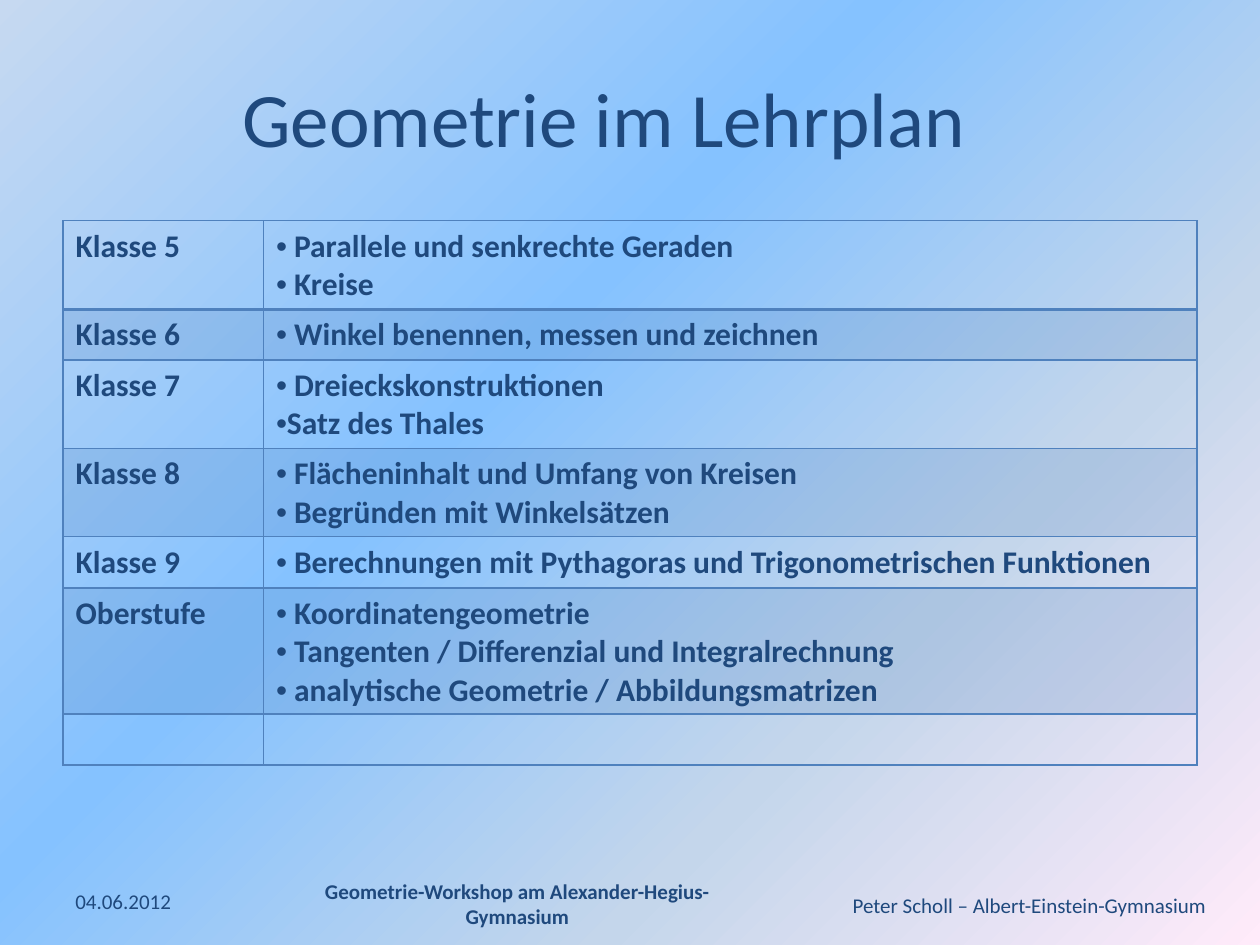
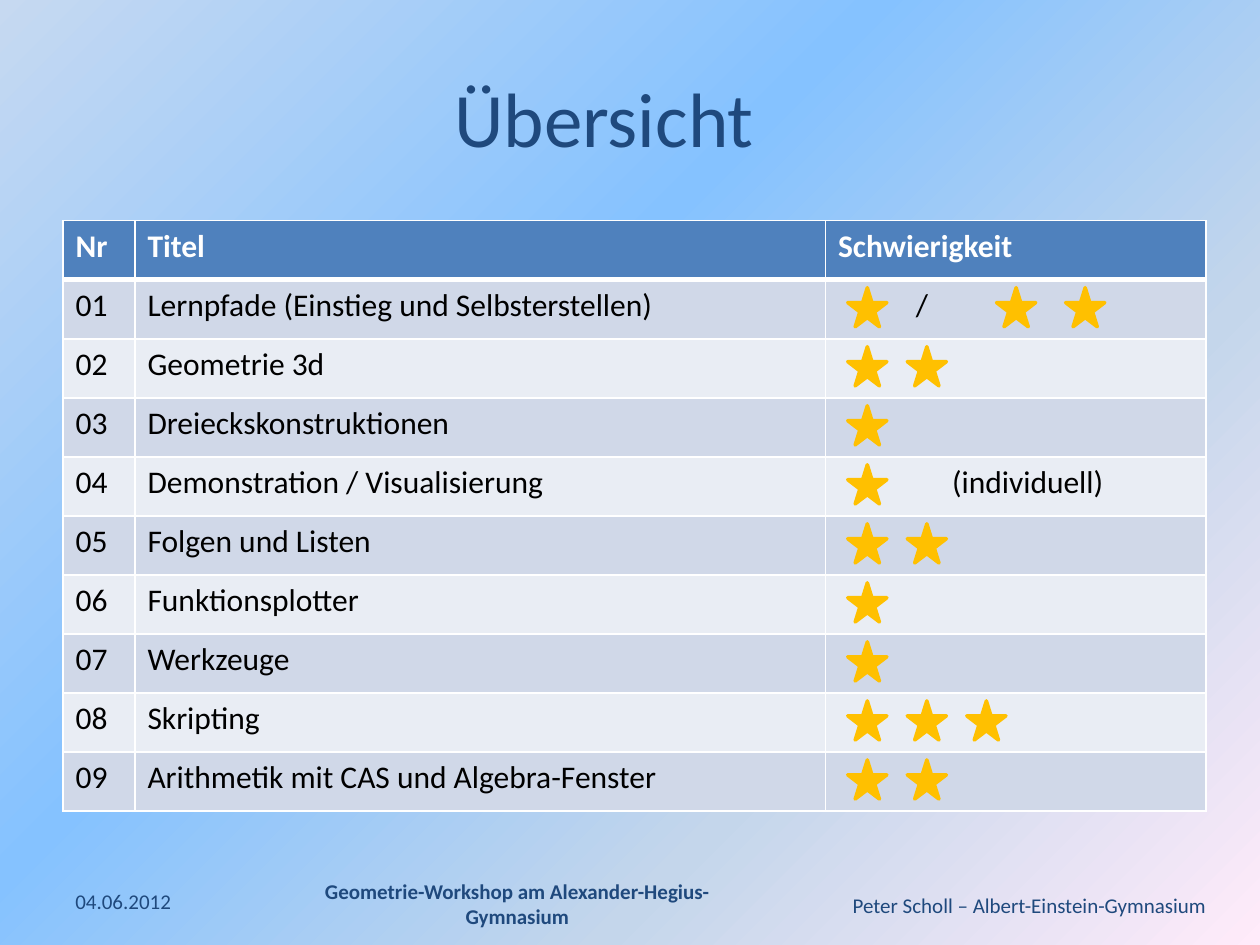
import copy
import pptx
import pptx.dml.color
import pptx.enum.shapes
import pptx.enum.text
import pptx.oxml
import pptx.oxml.ns
import pptx.util

Cm, Pt = pptx.util.Cm, pptx.util.Pt
RGB = pptx.dml.color.RGBColor.from_string
ALIGN = pptx.enum.text.PP_ALIGN
NS = pptx.oxml.ns.nsdecls("a")
qn = pptx.oxml.ns.qn

COLORS = {"navy": "1F497D", "blue": "4F81BD", "white": "FFFFFF", "black": "000000",
          "band_dark": "D0D8E8", "band_light": "E9EDF4", "star": "FFC000"}
BACKGROUND = [(0, "C6D9F1"), (0.4, "85C2FF"), (0.7, "C4D6EB"), (1, "FFEBFA")]
FONT = "Calibri"
LEFT, TABLE_TOP = 1.27, 4.45


def write_text(tf, *lines, size=18, color="navy", bold=False, align=ALIGN.LEFT,
               bullet=False, indent=0):
    """Write one paragraph per line into a text frame."""
    for i, line in enumerate(lines):
        p = tf.add_paragraph() if i else tf.paragraphs[0]
        p.alignment = align
        pPr = p._p.get_or_add_pPr()
        pPr.set("marL", str(Cm(indent)))
        pPr.set("indent", "0")
        if bullet:
            pPr.append(pptx.oxml.parse_xml(f'<a:buFont {NS} typeface="Arial"/>'))
            pPr.append(pptx.oxml.parse_xml(f'<a:buChar {NS} char="•"/>'))
        r = p.add_run()
        r.text = line
        r.font.name = FONT
        r.font.size = Pt(size)
        r.font.bold = bold
        r.font.color.rgb = RGB(COLORS[color])


def style_cell(cell, line, fill=None, alpha=None, top=1, bottom=1):
    """Set the four borders of a cell, then its fill."""
    tcPr = cell._tc.get_or_add_tcPr()
    for side, width in (("L", 1), ("R", 1), ("T", top), ("B", bottom)):
        tcPr.append(pptx.oxml.parse_xml(
            f'<a:ln{side} {NS} w="{Pt(width)}"><a:solidFill>'
            f'<a:srgbClr val="{COLORS[line]}"/></a:solidFill></a:ln{side}>'))
    if fill is None:
        cell.fill.background()
        return
    cell.fill.solid()
    cell.fill.fore_color.rgb = RGB(COLORS[fill])
    if alpha:
        clr = tcPr.find(qn("a:solidFill")).find(qn("a:srgbClr"))
        clr.append(pptx.oxml.parse_xml(f'<a:alpha {NS} val="{alpha * 1000}"/>'))


prs = pptx.Presentation()
prs.slide_width, prs.slide_height = Cm(25.4), Cm(19.05)

# Shared gradient background
fill = prs.slide_master.background.fill
fill.gradient()
fill.gradient_angle = 315
gsLst = fill.gradient_stops[0]._gs.getparent()
for _ in range(len(BACKGROUND) - len(gsLst)):
    gsLst.append(copy.deepcopy(gsLst[-1]))
for gs, (position, color) in zip(fill.gradient_stops, BACKGROUND):
    gs.position = position
    gs.color.rgb = RGB(color)
    for change in list(gs._gs[0]):
        gs._gs[0].remove(change)

# Shared title and footers: text, left, top, width, height, format
FRAME_TEXTS = [
    (None, LEFT, 0.76, 21.82, 3.18, dict(size=44, align=ALIGN.CENTER)),
    ("04.06.2012", LEFT, 17.65, 3.23, 1.02, dict(size=12)),
    ("Geometrie-Workshop am Alexander-Hegius-Gymnasium", 5.31, 17.7, 10.24, 1.02,
     dict(size=12, bold=True, align=ALIGN.CENTER)),
    ("Peter Scholl – Albert-Einstein-Gymnasium", 16.54, 17.73, 8.03, 1.02,
     dict(size=12, align=ALIGN.RIGHT)),
]
slides = []
for title in ("Geometrie im Lehrplan", "Übersicht"):
    s = prs.slides.add_slide(prs.slide_layouts[6])
    slides.append(s)
    for text, x, y, w, h, fmt in FRAME_TEXTS:
        tf = s.shapes.add_textbox(Cm(x), Cm(y), Cm(w), Cm(h)).text_frame
        tf.word_wrap = True
        tf.vertical_anchor = pptx.enum.text.MSO_ANCHOR.MIDDLE
        write_text(tf, text or title, **fmt)
curriculum_slide, overview_slide = slides

# Curriculum table
curriculum = [
    ("Klasse 5", [" Parallele und senkrechte Geraden", " Kreise"]),
    ("Klasse 6", [" Winkel benennen, messen und zeichnen"]),
    ("Klasse 7", [" Dreieckskonstruktionen", "Satz des Thales"]),
    ("Klasse 8", [" Flächeninhalt und Umfang von Kreisen", " Begründen mit Winkelsätzen"]),
    ("Klasse 9", [" Berechnungen mit Pythagoras und Trigonometrischen Funktionen"]),
    ("Oberstufe", [" Koordinatengeometrie", " Tangenten / Differenzial und Integralrechnung",
                   " analytische Geometrie / Abbildungsmatrizen"]),
    ("", []),
]
widths = [4.04, 18.82]
heights = [1.03 + 0.75 * max(len(topics) - 1, 0) for _, topics in curriculum]
table = curriculum_slide.shapes.add_table(
    len(curriculum), 2, Cm(LEFT), Cm(TABLE_TOP), Cm(sum(widths)), Cm(sum(heights))).table
table.first_row = table.horz_banding = False
for col, width in zip(table.columns, widths):
    col.width = Cm(width)
for i, (grade, topics) in enumerate(curriculum):
    table.rows[i].height = Cm(heights[i])
    for cell in table.rows[i].cells:
        style_cell(cell, "blue", "blue" if i % 2 else None, alpha=20,
                   top=2 if i == 1 else 1, bottom=2 if i == 0 else 1)
    if grade:
        write_text(table.cell(i, 0).text_frame, grade, bold=True)
        write_text(table.cell(i, 1).text_frame, *topics, bold=True, bullet=True)

# Overview table: title, note, indent of the note, slots of the stars
STAR_SIZE, STAR_LEFT, STAR_STEP = 0.79, 17.09, 1.2
workshops = [
    ("Lernpfade (Einstieg und Selbsterstellen)", "/", 1.57, [0, 2.5, 3.66]),
    ("Geometrie 3d", "", 0, [0, 1]),
    ("Dreieckskonstruktionen", "", 0, [0]),
    ("Demonstration / Visualisierung", "(individuell)", 2.3, [0]),
    ("Folgen und Listen", "", 0, [0, 1]),
    ("Funktionsplotter", "", 0, [0]),
    ("Werkzeuge", "", 0, [0]),
    ("Skripting", "", 0, [0, 1, 2]),
    ("Arithmetik mit CAS und Algebra-Fenster", "", 0, [0, 1]),
]
widths = [1.45, 13.92, 7.67]
row_height = 1.19
n_rows = len(workshops) + 1
table = overview_slide.shapes.add_table(
    n_rows, 3, Cm(LEFT), Cm(TABLE_TOP), Cm(sum(widths)), Cm(row_height * n_rows)).table
table.horz_banding = False
for col, width in zip(table.columns, widths):
    col.width = Cm(width)
for row in table.rows:
    row.height = Cm(row_height)
for cell, heading in zip(table.rows[0].cells, ("Nr", "Titel", "Schwierigkeit")):
    style_cell(cell, "white", "blue", bottom=3)
    write_text(cell.text_frame, heading, color="white", bold=True)
for i, (title, note, indent, slots) in enumerate(workshops, start=1):
    for cell in table.rows[i].cells:
        style_cell(cell, "white", "band_dark" if i % 2 else "band_light",
                   top=3 if i == 1 else 1)
    write_text(table.cell(i, 0).text_frame, f"{i:02}", color="black")
    write_text(table.cell(i, 1).text_frame, title, color="black")
    if note:
        write_text(table.cell(i, 2).text_frame, note, color="black", indent=indent)

    # Difficulty stars
    for slot in slots:
        sp = overview_slide.shapes.add_shape(
            pptx.enum.shapes.MSO_SHAPE.STAR_5_POINT,
            Cm(STAR_LEFT + slot * STAR_STEP), Cm(TABLE_TOP + i * row_height + 0.16),
            Cm(STAR_SIZE), Cm(STAR_SIZE))
        sp.shadow.inherit = False
        sp.fill.solid()
        sp.fill.fore_color.rgb = RGB(COLORS["star"])
        sp.line.color.rgb = RGB(COLORS["star"])
        sp.line.width = Pt(2)

prs.save("out.pptx")
